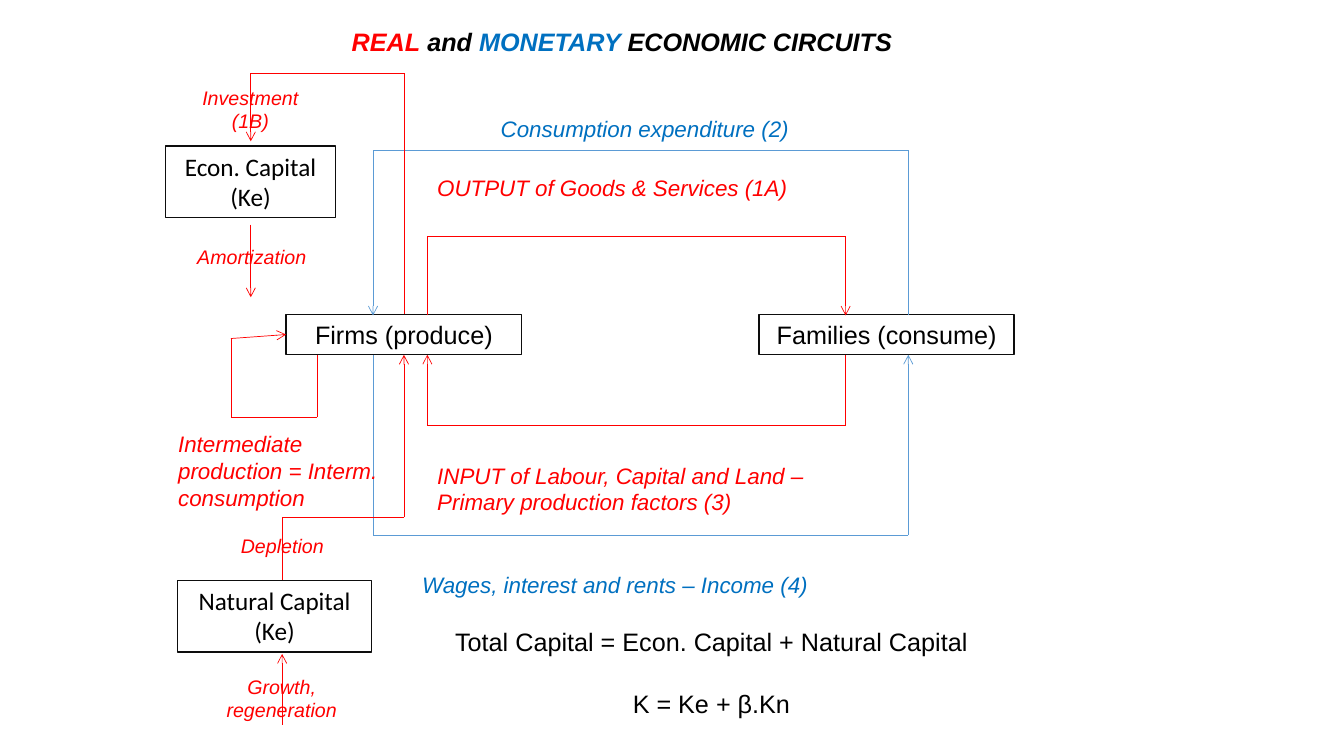
import pptx
import pptx.util
import pptx.dml.color
import pptx.enum.shapes
import pptx.enum.text
import pptx.oxml.ns
import lxml.etree

Cm, Pt = pptx.util.Cm, pptx.util.Pt
ALIGN = pptx.enum.text.PP_ALIGN
HUES = {"real": "FF0000", "money": "0070C0", "flow": "5B9BD5",
        "ink": "000000", "edge": "0D0D0D"}


class Chart:
    """Holds the style and the current slide."""

    def __init__(self, deck):
        self.slide = deck.slides.add_slide(deck.slide_layouts[5])
        self.shapes = self.slide.shapes

    def hue(self, name):
        return pptx.dml.color.RGBColor.from_string(HUES[name])

    def style(self, font, size, hue, slant=False, face="Arial"):
        font.name, font.size, font.italic = face, Pt(size), slant
        font.color.rgb = self.hue(hue)

    def title(self, spot, parts):
        shape = self.shapes.title
        shape.left, shape.top, shape.width, shape.height = map(Cm, spot)
        frame = shape.text_frame
        frame.word_wrap = False
        frame.auto_size = pptx.enum.text.MSO_AUTO_SIZE.NONE
        frame.vertical_anchor = pptx.enum.text.MSO_ANCHOR.TOP
        para = frame.paragraphs[0]
        para.alignment = ALIGN.LEFT
        self.style(para.font, 18, "ink", True)
        para.font.bold = True
        for text, hue in parts:
            run = para.add_run()
            run.text = text
            run.font.color.rgb = self.hue(hue)

    def box(self, spot, text, face="Arial"):
        kind = pptx.enum.shapes.MSO_SHAPE.RECTANGLE
        shape = self.shapes.add_shape(kind, *map(Cm, spot))
        shape.shadow.inherit = False
        shape.fill.background()
        shape.line.color.rgb = self.hue("edge")
        shape.line.width = Pt(1)
        frame = shape.text_frame
        frame.word_wrap = True
        frame.vertical_anchor = pptx.enum.text.MSO_ANCHOR.TOP
        para = frame.paragraphs[0]
        para.text, para.alignment = text, ALIGN.CENTER
        self.style(para.font, 18, "ink", face=face)
        return shape

    def label(self, spot, lines, hue="real", size=16, mid=False,
              slant=True, wrap=True, gap=0):
        frame = self.shapes.add_textbox(*map(Cm, spot)).text_frame
        frame.word_wrap = wrap
        for i, text in enumerate(lines):
            para = frame.add_paragraph() if i else frame.paragraphs[0]
            para.text = text
            para.alignment = ALIGN.CENTER if mid else ALIGN.LEFT
            para.space_before = Pt(gap if i else 0)
            self.style(para.font, size, hue, slant)

    def route(self, hue, points, tip=True, start=None, end=None):
        """Draws straight legs through the points, joined to boxes at the ends."""
        legs = []
        for a, b in zip(points, points[1:]):
            kind = pptx.enum.shapes.MSO_CONNECTOR.STRAIGHT
            leg = self.shapes.add_connector(kind, *map(Cm, a + b))
            leg.line.color.rgb = self.hue(hue)
            leg.line.width = Pt(0.5)
            props = leg._element.spPr
            lxml.etree.SubElement(props, pptx.oxml.ns.qn("a:effectLst"))
            legs.append(leg)
        if start:
            legs[0].begin_connect(*start)
        if end:
            legs[-1].end_connect(*end)
        if tip:
            line = legs[-1].line._get_or_add_ln()
            lxml.etree.SubElement(line, pptx.oxml.ns.qn("a:tailEnd"), type="arrow")


def main():
    deck = pptx.Presentation()
    deck.slide_width, deck.slide_height = Cm(33.87), Cm(19.05)
    page = Chart(deck)
    page.title((8.61, 0.53, 14.25, 1.02),
               [("REAL", "real"), (" and ", "ink"), ("MONETARY ", "money"),
                ("ECONOMIC CIRCUITS", "ink")])

    # Actors and capital stocks
    firms = page.box((7.21, 7.92, 5.94, 1.02), "Firms (produce)")
    page.box((19.13, 7.92, 6.43, 1.02), "Families (consume)")
    page.box((4.17, 3.68, 4.29, 1.8), "Econ. Capital (Ke)", "Calibri")
    page.box((4.47, 14.63, 4.9, 1.8), "Natural Capital (Ke)", "Calibri")

    # Circuits between firms and families
    top, base = 7.95, 8.94
    inner, outer = (10.77, 21.31), (9.4, 22.89)

    def loop(hue, start, stop, level, edge):
        page.route(hue, [(start, edge), (start, level), (stop, level), (stop, edge)])

    loop("real", *inner, 5.96, top)
    loop("real", *inner[::-1], 10.72, base)
    loop("flow", *outer[::-1], 3.78, top)
    loop("flow", *outer, 13.49, base)

    # Intermediate production
    page.route("real", [(8, base), (8, 10.52), (5.82, 10.52), (5.82, 8.53),
                        (7.21, 8.43)], end=(firms, 1))

    # Capital flows
    page.route("real", [(10.18, 7.92), (10.18, 1.85), (6.32, 1.85), (6.32, 3.56)],
               start=(firms, 0))
    page.route("real", [(6.32, 5.66), (6.32, 7.49)])
    page.route("real", [(7.11, 14.61), (7.11, 13.03), (10.18, 13.03), (10.18, 8.94)],
               end=(firms, 2))
    page.route("real", [(7.11, 18.26), (7.11, 16.48)])

    # Circuit labels
    page.label((10.77, 4.27, 11.35, 0.94), ["OUTPUT of Goods & Services (1A)"])
    page.label((10.77, 11.51, 10.52, 1.63),
               ["INPUT of Labour, Capital and Land – Primary production factors (3)"])
    page.label((12.37, 2.77, 7.85, 0.94), ["Consumption expenditure (2)"],
               "money", wrap=False)
    page.label((10.39, 14.27, 10.36, 0.94), ["Wages, interest and rents – Income (4)"],
               "money", wrap=False)
    page.label((4.24, 10.72, 5.69, 2.31),
               ["Intermediate production = Interm. consumption"])

    # Capital labels
    for left, high, tall, text, mid in [
            (4.72, 6.05, 0.86, "Amortization", False),
            (4.52, 2.03, 1.45, "Investment (1B)", True),
            (5.82, 13.34, 0.86, "Depletion", False),
            (5.31, 16.87, 1.45, "Growth, regeneration", True)]:
        page.label((left, high, 3.58, tall), [text], size=14, mid=mid)

    # Total capital
    page.label((9.19, 15.67, 17.48, 2.57),
               ["Total Capital = Econ. Capital + Natural Capital", "K = Ke + β.Kn"],
               "ink", 18, mid=True, slant=False, gap=22)
    deck.save("out.pptx")


if __name__ == "__main__":
    main()
